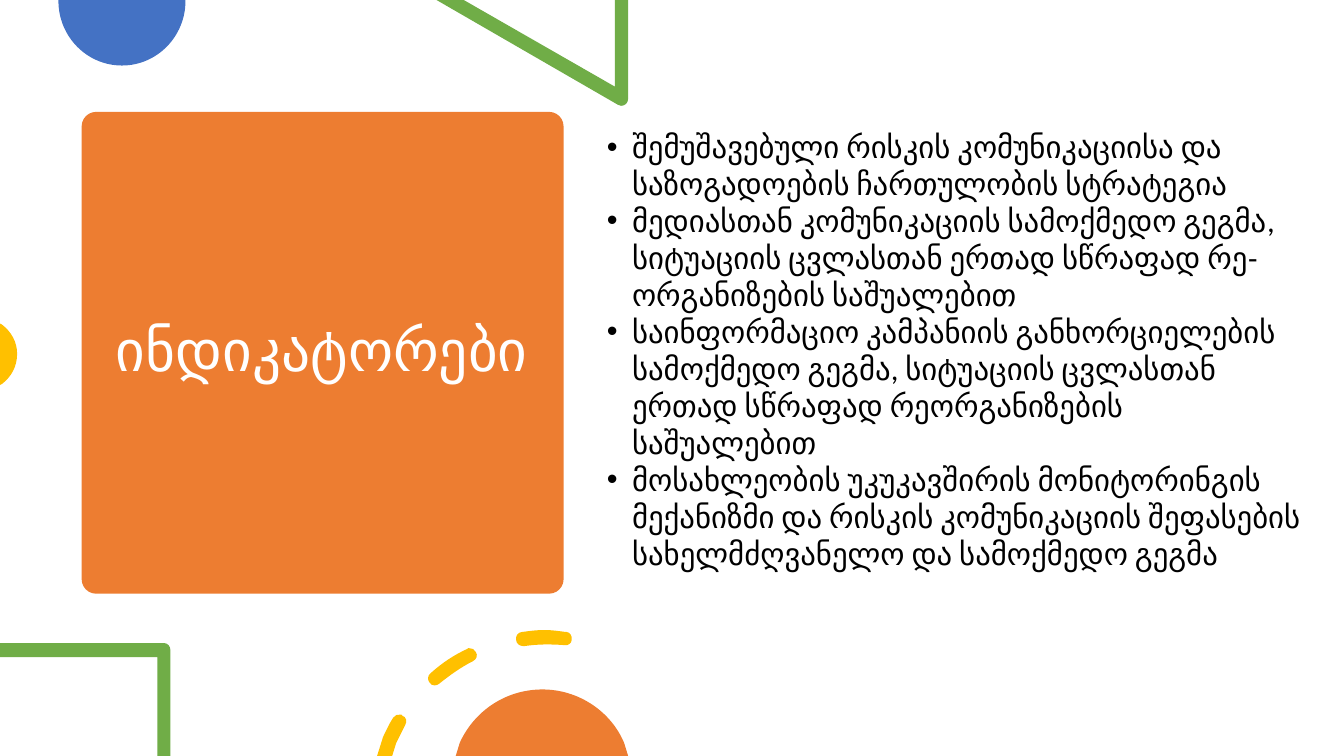
from lxml import etree
from pptx import Presentation
from pptx.dml.color import RGBColor
from pptx.enum.shapes import MSO_SHAPE
from pptx.enum.text import MSO_ANCHOR
from pptx.oxml.ns import qn
from pptx.util import Inches, Pt

# Content
TITLE = "ინდიკატორები"
INDICATORS = [
    "შემუშავებული რისკის კომუნიკაციისა და საზოგადოების ჩართულობის სტრატეგია",
    "მედიასთან კომუნიკაციის სამოქმედო გეგმა, სიტუაციის ცვლასთან ერთად სწრაფად რე-ორგანიზების საშუალებით",
    "საინფორმაციო კამპანიის განხორციელების სამოქმედო გეგმა, სიტუაციის ცვლასთან ერთად სწრაფად რეორგანიზების საშუალებით",
    "მოსახლეობის უკუკავშირის მონიტორინგის მექანიზმი და რისკის კომუნიკაციის შეფასების სახელმძღვანელო და სამოქმედო გეგმა",
]

FONT = "Calibri"
WHITE = RGBColor(0xFF, 0xFF, 0xFF)
BLACK = RGBColor(0x00, 0x00, 0x00)
ORANGE = RGBColor(0xED, 0x7D, 0x31)
BLUE = RGBColor(0x44, 0x72, 0xC4)
GREEN = RGBColor(0x70, 0xAD, 0x47)
YELLOW = RGBColor(0xFF, 0xC0, 0x00)

# Outlines in inches: a pair is a corner, six numbers are a Bezier curve
BLUE_DISC = [(1.84, 0), (0.58, 0), (0.58, 0.01),
             (0.58, 0.36, 0.86, 0.65, 1.21, 0.65),
             (1.56, 0.65, 1.84, 0.36, 1.84, 0.01)]
GREEN_TRIANGLE = [(6.23, 0), (6.1, 0), (6.1, 0.86), (4.6, 0), (4.33, 0), (6.13, 1.04),
                  (6.14, 1.05, 6.15, 1.05, 6.16, 1.05),
                  (6.2, 1.05, 6.23, 1.02, 6.23, 0.98)]
YELLOW_DISC = [(0, 3.21), (0, 3.82), (0.02, 3.81),
               (0.11, 3.74, 0.17, 3.64, 0.17, 3.51),
               (0.17, 3.39, 0.11, 3.29, 0.02, 3.22)]
GREEN_FRAME = [(1.63, 6.38), (0, 6.38), (0, 6.52), (1.56, 6.52), (1.56, 7.5),
               (1.69, 7.5), (1.69, 6.45), (1.69, 6.41, 1.66, 6.38, 1.63, 6.38)]
LOW_DASH = [(3.97, 7.09), (3.94, 7.08, 3.92, 7.1, 3.9, 7.12),
            (3.86, 7.18, 3.83, 7.25, 3.8, 7.31), (3.74, 7.5), (3.89, 7.5), (3.93, 7.37),
            (3.96, 7.31, 3.99, 7.25, 4.02, 7.19), (4.04, 7.16, 4.03, 7.11, 3.99, 7.1),
            (3.99, 7.09, 3.98, 7.09, 3.97, 7.09)]
MIDDLE_DASH = [(4.65, 6.43), (4.65, 6.43, 4.64, 6.43, 4.63, 6.44),
               (4.5, 6.5, 4.38, 6.58, 4.27, 6.68), (4.24, 6.7, 4.24, 6.75, 4.26, 6.77),
               (4.27, 6.79, 4.29, 6.8, 4.31, 6.8), (4.31, 6.8),
               (4.33, 6.8, 4.35, 6.79, 4.36, 6.78),
               (4.46, 6.7, 4.57, 6.62, 4.69, 6.56), (4.73, 6.54, 4.74, 6.5, 4.72, 6.47),
               (4.71, 6.44, 4.68, 6.43, 4.65, 6.43)]
TOP_DASH = [(5.4, 6.25), (5.32, 6.25, 5.25, 6.26, 5.18, 6.27),
            (5.14, 6.27, 5.11, 6.31, 5.12, 6.35), (5.12, 6.38, 5.15, 6.41, 5.19, 6.41),
            (5.19, 6.41, 5.19, 6.41, 5.2, 6.41), (5.33, 6.39, 5.46, 6.39, 5.6, 6.4),
            (5.63, 6.41, 5.67, 6.38, 5.67, 6.35), (5.68, 6.31, 5.65, 6.27, 5.62, 6.27),
            (5.62, 6.27, 5.61, 6.27, 5.61, 6.27), (5.54, 6.26, 5.47, 6.25, 5.4, 6.25)]
ORANGE_DISC = [(5.38, 6.84), (5.01, 6.84, 4.7, 7.06, 4.56, 7.37), (4.52, 7.5),
               (6.23, 7.5), (6.19, 7.37), (6.06, 7.06, 5.74, 6.84, 5.38, 6.84)]

DECORATIONS = [
    (BLUE, [BLUE_DISC]),
    (GREEN, [GREEN_TRIANGLE]),
    (YELLOW, [YELLOW_DISC]),
    (GREEN, [GREEN_FRAME]),
    (YELLOW, [LOW_DASH, MIDDLE_DASH, TOP_DASH]),
    (ORANGE, [ORANGE_DISC]),
]


def paint(shape, color):
    shape.shadow.inherit = False
    shape.fill.solid()
    shape.fill.fore_color.rgb = color
    shape.line.fill.background()


def bend(shape, line, controls):
    """Turn a straight segment into a Bezier curve to the same end."""
    line.tag = qn("a:cubicBezTo")
    for index in (0, 1):
        x, y = controls[2 * index:2 * index + 2]
        point = etree.Element(qn("a:pt"))
        point.set("x", str(Inches(x) - shape.left))
        point.set("y", str(Inches(y) - shape.top))
        line.insert(index, point)


def add_decoration(slide, color, outlines):
    # Straight segments through the end points
    contours = [[tuple(map(Inches, segment[-2:])) for segment in outline]
                for outline in outlines]
    builder = slide.shapes.build_freeform(*contours[0][0], scale=1.0)
    for index, points in enumerate(contours):
        if index:
            builder.move_to(*points[0])
        builder.add_line_segments(points[1:], close=True)
    shape = builder.convert_to_shape()
    paint(shape, color)

    # Curves where the outline has control points
    segments = [segment for outline in outlines for segment in outline[1:]]
    lines = list(shape._element.iter(qn("a:lnTo")))
    for line, segment in zip(lines, segments):
        if len(segment) == 6:
            bend(shape, line, segment[:4])


def add_text(slide, box, lines, size, color, anchor):
    frame = slide.shapes.add_textbox(*map(Inches, box)).text_frame
    frame.word_wrap = True
    frame.vertical_anchor = anchor
    frame.text = "\n".join(lines)
    for paragraph in frame.paragraphs:
        font = paragraph.runs[0].font
        font.name, font.size, font.color.rgb = FONT, Pt(size), color
    return frame


def add_bullet(paragraph):
    properties = paragraph._p.get_or_add_pPr()
    properties.set("marL", str(Inches(0.25)))
    properties.set("indent", str(-Inches(0.25)))
    etree.SubElement(properties, qn("a:buFont")).set("typeface", "Arial")
    etree.SubElement(properties, qn("a:buChar")).set("char", "•")


presentation = Presentation()
presentation.slide_width, presentation.slide_height = Inches(13.33), Inches(7.5)
slide = presentation.slides.add_slide(presentation.slide_layouts[6])

# Title card
card = slide.shapes.add_shape(MSO_SHAPE.ROUNDED_RECTANGLE,
                              *map(Inches, (0.81, 1.11, 4.78, 4.78)))
card.adjustments[0] = 0.03
paint(card, ORANGE)
title = add_text(slide, (1.05, 1.22, 4.31, 4.56), [TITLE], 41, WHITE, MSO_ANCHOR.MIDDLE)
title.paragraphs[0].line_spacing = 0.9

# Decorations around the edges
for color, outlines in DECORATIONS:
    add_decoration(slide, color, outlines)

# Indicator list
indicators = add_text(slide, (5.92, 1.22, 7.15, 4.67), INDICATORS, 22, BLACK, MSO_ANCHOR.TOP)
for paragraph in indicators.paragraphs:
    add_bullet(paragraph)

presentation.save("out.pptx")
